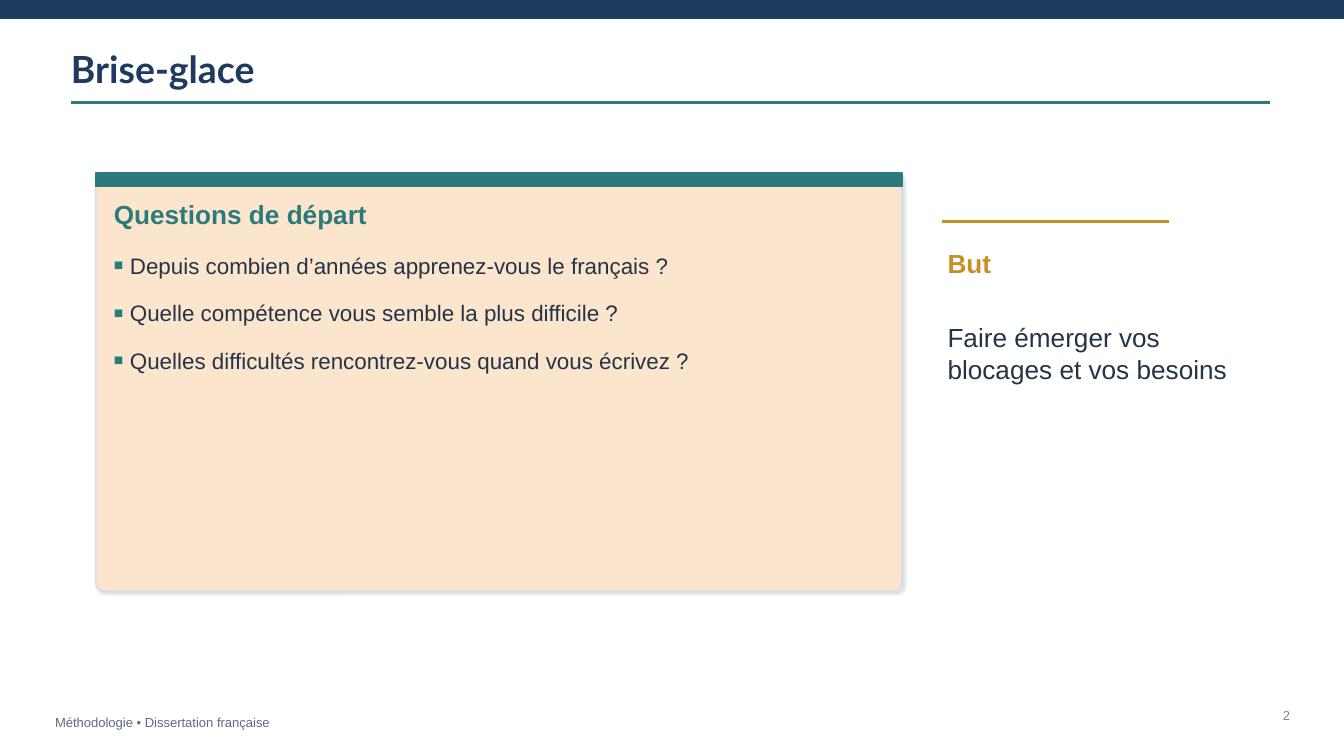
import dataclasses
import typing

import lxml.etree
import pptx
import pptx.dml.color
import pptx.enum.shapes
import pptx.enum.text
import pptx.oxml
import pptx.oxml.ns
import pptx.util

Pt = pptx.util.Pt
SHAPE = pptx.enum.shapes.MSO_SHAPE
ALIGN = pptx.enum.text.PP_ALIGN
ANCHOR = pptx.enum.text.MSO_ANCHOR
NAVY = "1E3A5F"
TEAL = "2C7A7B"
GOLD = "C69026"
INK = "243447"
SPACE = 'xmlns:a="http://schemas.openxmlformats.org/drawingml/2006/main"'


@dataclasses.dataclass
class Panel:
    left: float
    top: float
    width: float
    height: float
    fill: str
    line: str
    round: float = 0


@dataclasses.dataclass
class Rule:
    left: float
    right: float
    top: float
    hue: str


@dataclasses.dataclass
class Label:
    left: float
    top: float
    width: float
    height: float
    words: str
    size: float
    hue: str
    bold: bool = False
    font: str = "Arial"
    align: typing.Any = ALIGN.LEFT


def color(code: str) -> pptx.dml.color.RGBColor:
    return pptx.dml.color.RGBColor.from_string(code)


def draw_panel(slide: typing.Any, item: Panel) -> typing.Any:
    kind = SHAPE.ROUNDED_RECTANGLE if item.round else SHAPE.RECTANGLE
    shape = slide.shapes.add_shape(
        kind, Pt(item.left), Pt(item.top), Pt(item.width), Pt(item.height))
    if item.round:
        shape.adjustments[0] = item.round
    shape.shadow.inherit = False
    shape.fill.solid()
    shape.fill.fore_color.rgb = color(item.fill)
    shape.line.color.rgb = color(item.line)
    shape.line.width = Pt(1)
    return shape


def add_shade(shape: typing.Any) -> None:
    glow = shape.element.spPr.find(pptx.oxml.ns.qn("a:effectLst"))
    glow.append(pptx.oxml.parse_xml(
        f'<a:outerShdw {SPACE} blurRad="{Pt(1)}" dist="{Pt(1)}" dir="2700000" '
        'algn="bl" rotWithShape="0"><a:srgbClr val="000000">'
        '<a:alpha val="12000"/></a:srgbClr></a:outerShdw>'))


def draw_rule(slide: typing.Any, item: Rule) -> None:
    line = slide.shapes.add_connector(
        pptx.enum.shapes.MSO_CONNECTOR.STRAIGHT,
        Pt(item.left), Pt(item.top), Pt(item.right), Pt(item.top))
    line.line.color.rgb = color(item.hue)
    line.line.width = Pt(1.5)
    lxml.etree.SubElement(line.element.spPr, pptx.oxml.ns.qn("a:effectLst"))


def set_frame(shape: typing.Any, item: Label, anchor: typing.Any) -> typing.Any:
    shape.left, shape.top = Pt(item.left), Pt(item.top)
    shape.width, shape.height = Pt(item.width), Pt(item.height)
    frame = shape.text_frame
    frame.margin_left = frame.margin_right = 0
    frame.margin_top = frame.margin_bottom = 0
    frame.word_wrap = True
    frame.auto_size = pptx.enum.text.MSO_AUTO_SIZE.NONE
    frame.vertical_anchor = anchor
    return frame


def add_run(para: typing.Any, words: str, item: Label) -> None:
    para.alignment = item.align
    run = para.add_run()
    run.text = words
    run.font.name = item.font
    run.font.size = Pt(item.size)
    run.font.bold = item.bold
    run.font.color.rgb = color(item.hue)


def fill_text(shape: typing.Any, item: Label) -> None:
    frame = set_frame(shape, item, ANCHOR.MIDDLE)
    add_run(frame.paragraphs[0], item.words, item)


def draw_label(slide: typing.Any, item: Label) -> None:
    fill_text(slide.shapes.add_textbox(0, 0, Pt(1), Pt(1)), item)


def fill_list(shape: typing.Any, item: Label) -> None:
    frame = set_frame(shape, item, ANCHOR.TOP)
    for rank, words in enumerate(item.words.split("\n")):
        para = frame.add_paragraph() if rank else frame.paragraphs[0]
        props = para._p.get_or_add_pPr()
        props.set("marL", str(Pt(8.6)))
        props.set("indent", str(-Pt(8.6)))
        for mark in (
            f'<a:buClr {SPACE}><a:srgbClr val="{TEAL}"/></a:buClr>',
            f'<a:buSzPct {SPACE} val="70000"/>',
            f'<a:buFont {SPACE} typeface="Arial"/>',
            f'<a:buChar {SPACE} char="■"/>',
        ):
            props.append(pptx.oxml.parse_xml(mark))
        para.space_before = Pt(11 if rank else 0)
        add_run(para, words, item)


TITLE = Label(38, 24.5, 470, 24.5, "Brise-glace", 20, NAVY, True, "Lato")
ASKS = Label(61, 135, 413, 66, "\n".join((
    "Depuis combien d’années apprenez-vous le français ?",
    "Quelle compétence vous semble la plus difficile ?",
    "Quelles difficultés rencontrez-vous quand vous écrivez ?",
)), 12, INK)
BAND = Panel(0, 0, 720, 9.5, NAVY, NAVY)
CARD = Panel(51.3, 92.8, 432, 224, "FCE5CD", "D7DEE8", 0.02)
STRIP = Panel(51.3, 92.8, 432, 7.2, TEAL, TEAL)
RULES = (Rule(38, 680.4, 55, TEAL), Rule(504.7, 626.4, 118.6, GOLD))
LABELS = (
    Label(29.5, 381, 227, 12, "Méthodologie • Dissertation française", 7, "5D6B82"),
    Label(61, 105, 413, 19, "Questions de départ", 14, TEAL, True),
    Label(507.6, 132.5, 65, 16.6, "But", 14, GOLD, True),
    Label(507.6, 152.6, 159, 73, "Faire émerger vos blocages et vos besoins", 14, INK),
    Label(672.5, 377, 18.7, 12, "2", 7, "7A8698", align=ALIGN.RIGHT),
)


def main() -> None:
    deck = pptx.Presentation()
    deck.slide_width, deck.slide_height = Pt(720), Pt(405)
    slide = deck.slides.add_slide(deck.slide_layouts[1])
    title, body = slide.shapes.title, slide.placeholders[1]
    draw_panel(slide, BAND)
    add_shade(draw_panel(slide, CARD))
    draw_panel(slide, STRIP)
    for rule in RULES:
        draw_rule(slide, rule)
    for label in LABELS:
        draw_label(slide, label)
    fill_text(title, TITLE)
    fill_list(body, ASKS)
    slide.shapes.element.append(body.element)
    deck.save("out.pptx")


if __name__ == "__main__":
    main()
